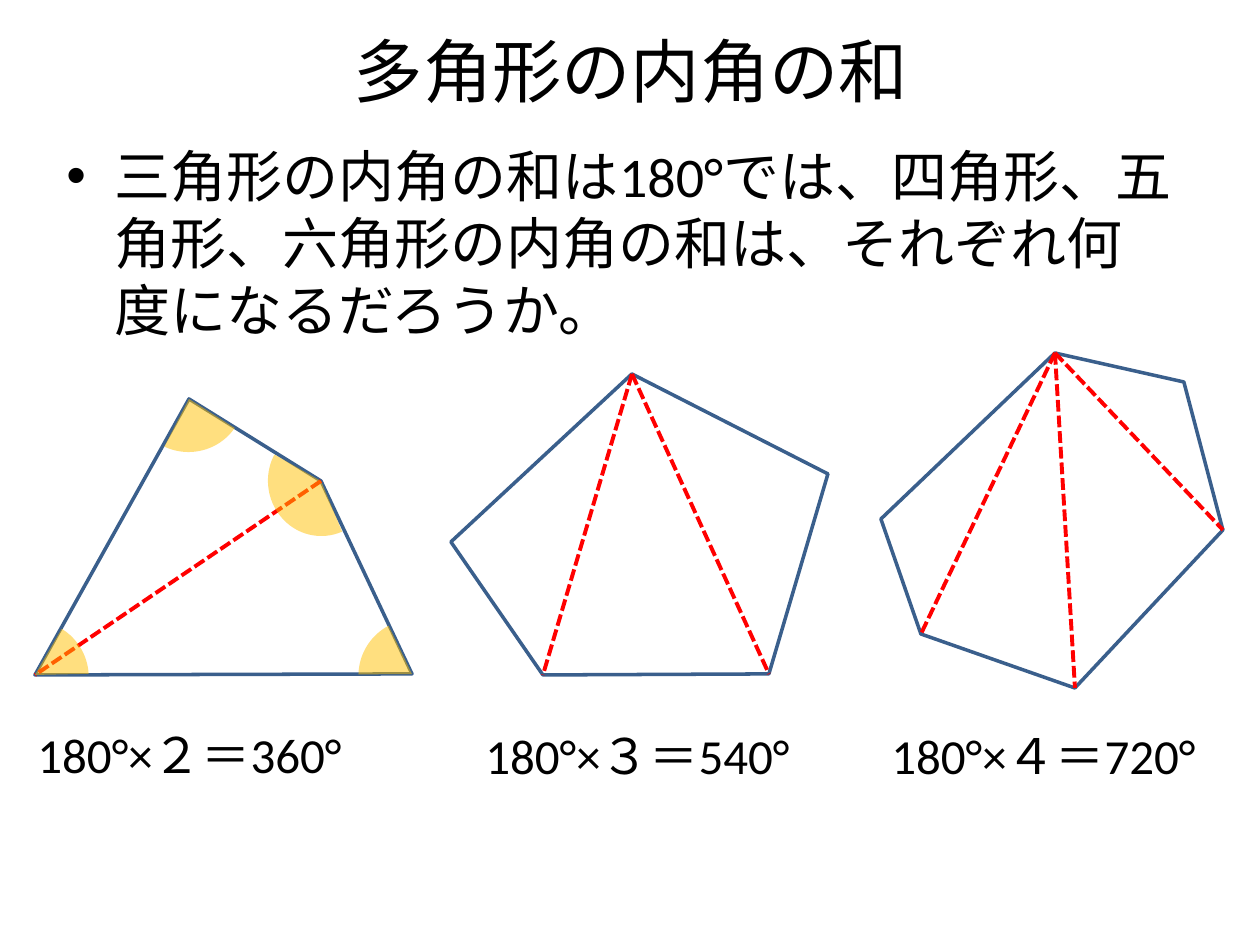
from pptx import Presentation
from pptx.dml.color import RGBColor
from pptx.enum.dml import MSO_LINE
from pptx.enum.shapes import MSO_CONNECTOR, MSO_SHAPE
from pptx.enum.text import MSO_ANCHOR, MSO_AUTO_SIZE, PP_ALIGN
from pptx.oxml.ns import qn
from pptx.util import Pt
from lxml import etree

PX = 914400 // 126
FONT = "Calibri"
COLORS = {"text": "000000", "side": "3A5F8C", "diagonal": "FF0000", "angle": "FFC000"}
ARC_END = 304.82  # degrees, before rotation
ARC_SIZE = (110, 106)

# Corners and label offset are relative to the box origin;
# each angle is (corner index, rotation, arc start) in degrees.
FIGURES = [
    {"origin": (35, 399), "corners": [(154, 0), (0, 276), (377, 275), (286, 82)],
     "diagonals": [(3, 1)], "label": "180°×２＝360°", "label_offset": (-10, 319),
     "angles": [(0, 172.6, 219.82), (1, 54, 246.09), (2, 299.3, 240.25), (3, 264.8, 162.53)]},
    {"origin": (451, 374), "corners": [(181, 0), (0, 168), (92, 301), (318, 300), (377, 100)],
     "diagonals": [(0, 2), (0, 3)], "label": "180°×３＝540°", "label_offset": (22, 345),
     "angles": []},
    {"origin": (881, 353),
     "corners": [(174, 0), (0, 166), (40, 281), (194, 335), (342, 177), (303, 29)],
     "diagonals": [(0, 2), (0, 4), (0, 3)], "label": "180°×４＝720°", "label_offset": (-2, 366),
     "angles": []},
]


def color(name):
    return RGBColor.from_string(COLORS[name])


def add_text(slide, box, text, size, wrap=True):
    frame = slide.shapes.add_textbox(*(v * PX for v in box)).text_frame
    frame.word_wrap = wrap
    paragraph = frame.paragraphs[0]
    run = paragraph.add_run()
    run.text = text
    run.font.size = Pt(size)
    run.font.name = FONT
    run.font.color.rgb = color("text")
    return frame


def add_title(slide, box):
    title = add_text(slide, box, "多角形の内角の和", 39.6)
    title.vertical_anchor = MSO_ANCHOR.MIDDLE
    title.paragraphs[0].alignment = PP_ALIGN.CENTER


def add_question(slide, box):
    question = add_text(
        slide, box,
        "三角形の内角の和は180°では、四角形、五角形、六角形の内角の和は、それぞれ何度になるだろうか。", 32)
    paragraph = question.paragraphs[0]
    paragraph.space_before = Pt(6.4)
    # Hanging bullet
    properties = paragraph._p.get_or_add_pPr()
    properties.set("marL", str(48 * PX))
    properties.set("indent", str(-48 * PX))
    etree.SubElement(properties, qn("a:buFont"), typeface="Arial")
    etree.SubElement(properties, qn("a:buChar"), char="•")


def add_diagonal(slide, start, end):
    diagonal = slide.shapes.add_connector(
        MSO_CONNECTOR.STRAIGHT, *(v * PX for v in (*start, *end)))
    diagonal.line.color.rgb = color("diagonal")
    diagonal.line.width = Pt(2.25)
    diagonal.line.dash_style = MSO_LINE.SQUARE_DOT
    etree.SubElement(diagonal._element.spPr, qn("a:effectLst"))


def add_angle(slide, corner, rotation, arc_start):
    width, height = ARC_SIZE
    left, top = corner[0] - width // 2, corner[1] - height // 2
    angle = slide.shapes.add_shape(
        MSO_SHAPE.ARC, left * PX, top * PX, width * PX, height * PX)
    # Arc adjustments count 60000ths of a degree, divided by 100000
    angle.adjustments[0] = arc_start * 0.6
    angle.adjustments[1] = ARC_END * 0.6
    angle.rotation = rotation
    angle.shadow.inherit = False
    angle.line.fill.background()
    angle.fill.solid()
    angle.fill.fore_color.rgb = color("angle")
    fill_color = angle._element.spPr.find(qn("a:solidFill"))[0]
    etree.SubElement(fill_color, qn("a:alpha"), val="50000")


def add_figure(slide, origin, corners, diagonals, angles, label, label_offset):
    left, top = origin
    points = [(left + x, top + y) for x, y in corners]

    # Outline
    builder = slide.shapes.build_freeform(*points[0], scale=PX)
    builder.add_line_segments(points[1:], close=True)
    polygon = builder.convert_to_shape()
    polygon.shadow.inherit = False
    polygon.fill.background()
    polygon.line.color.rgb = color("side")
    polygon.line.width = Pt(2)

    # Diagonals and interior angles
    for start, end in diagonals:
        add_diagonal(slide, points[start], points[end])
    for corner, rotation, arc_start in angles:
        add_angle(slide, points[corner], rotation, arc_start)

    # Sum of the angles
    label_box = (left + label_offset[0], top + label_offset[1], 408, 72)
    frame = add_text(slide, label_box, label, 28, wrap=False)
    frame.auto_size = MSO_AUTO_SIZE.SHAPE_TO_FIT_TEXT


def main():
    presentation = Presentation()
    presentation.slide_width = 1260 * PX
    presentation.slide_height = 945 * PX
    slide = presentation.slides.add_slide(presentation.slide_layouts[6])
    add_title(slide, (64, 26, 1134, 87))
    add_question(slide, (54, 135, 1134, 218))
    for figure in FIGURES:
        add_figure(slide, **figure)
    presentation.save("out.pptx")


if __name__ == "__main__":
    main()
